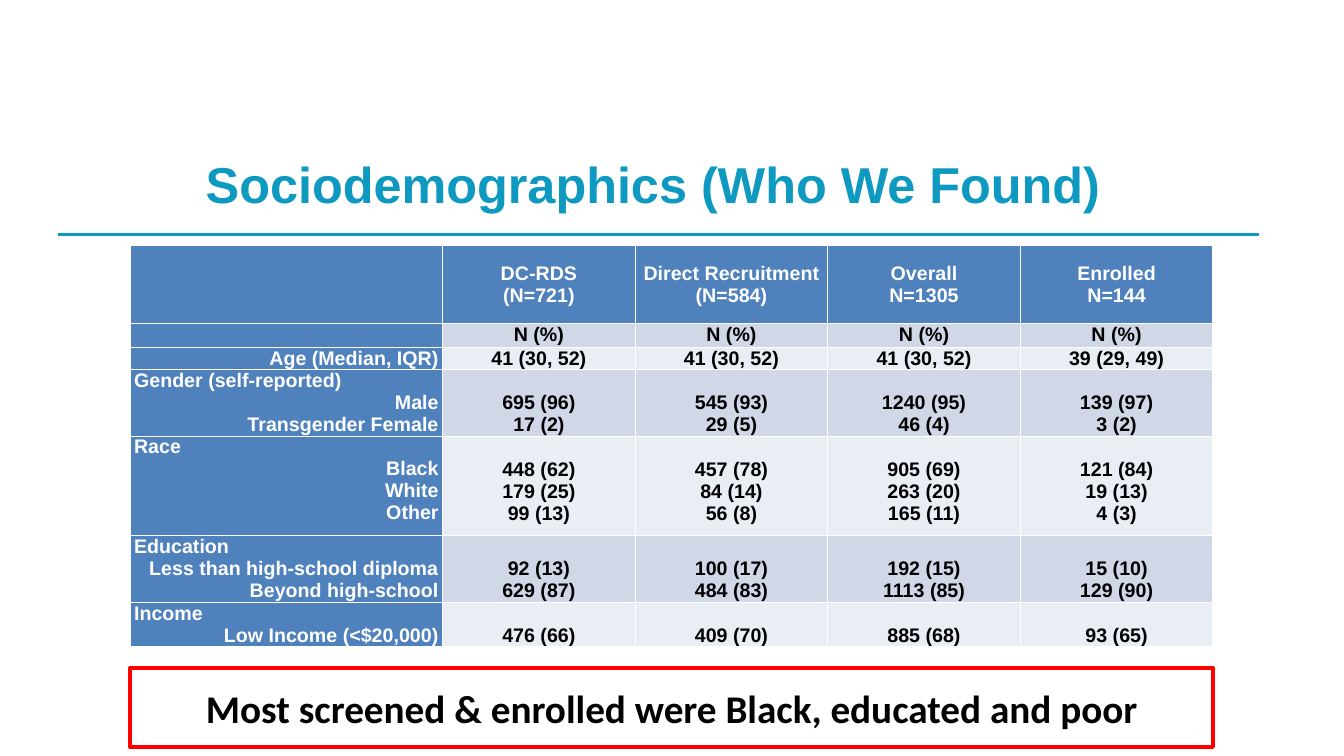
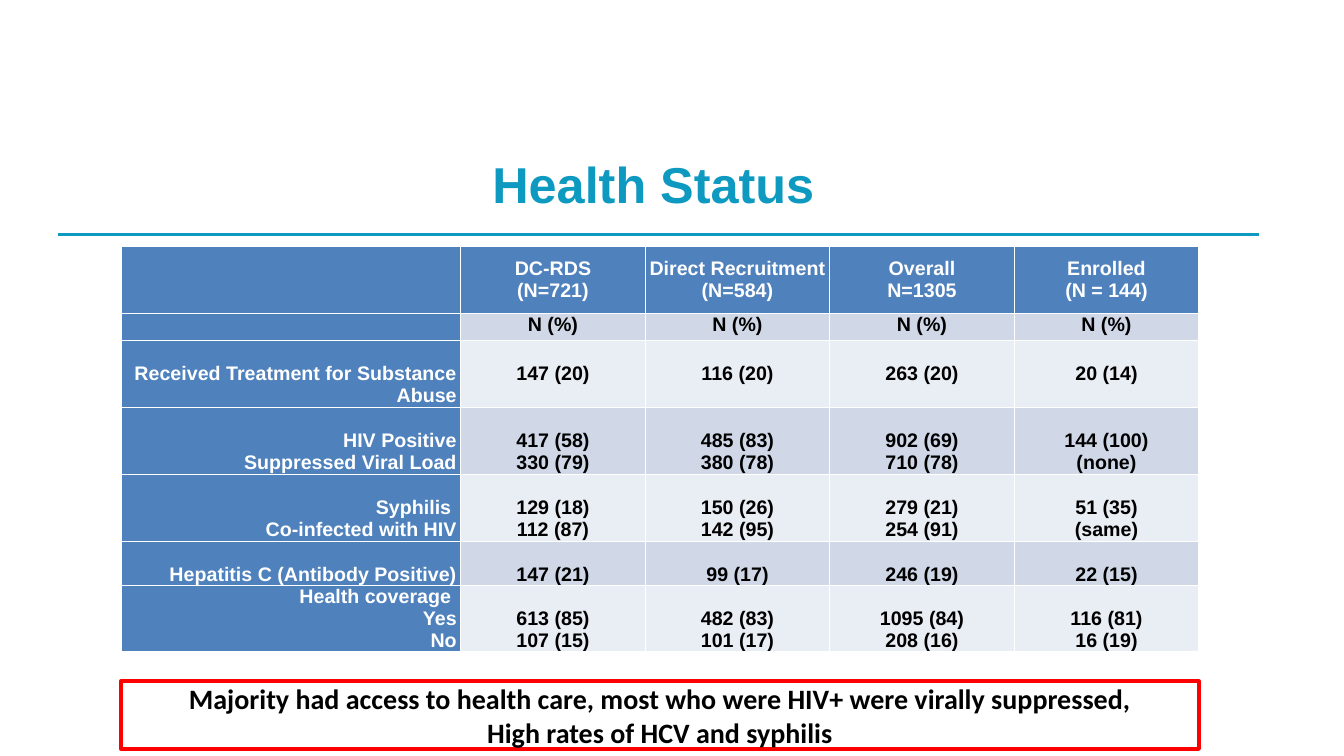
from dataclasses import dataclass

from lxml import etree
from pptx import Presentation
from pptx.dml.color import RGBColor
from pptx.enum.shapes import MSO_CONNECTOR, MSO_SHAPE
from pptx.enum.text import MSO_ANCHOR, MSO_AUTO_SIZE, PP_ALIGN
from pptx.oxml.ns import qn
from pptx.slide import Slide
from pptx.table import _Cell
from pptx.text.text import TextFrame
from pptx.util import Inches, Pt

CENTER, LEFT, RIGHT = PP_ALIGN.CENTER, PP_ALIGN.LEFT, PP_ALIGN.RIGHT
MIDDLE, TOP = MSO_ANCHOR.MIDDLE, MSO_ANCHOR.TOP
STRAIGHT, RECT, NO_FIT = MSO_CONNECTOR.STRAIGHT, MSO_SHAPE.RECTANGLE, MSO_AUTO_SIZE.NONE

TEAL = RGBColor(0x0E, 0x99, 0xC0)
BLUE = RGBColor(0x4F, 0x81, 0xBD)
DARK = RGBColor(0xD0, 0xD8, 0xE8)
LIGHT = RGBColor(0xE9, 0xED, 0xF4)
WHITE = RGBColor(0xFF, 0xFF, 0xFF)
BLACK = RGBColor(0, 0, 0)
RED = RGBColor(0xFF, 0, 0)

SIZE = 14
LINE = 0.22  # height of one line of table text, in inches


@dataclass(frozen=True)
class Row:
    """One table row; drop and lead are the lines left free above values and label."""
    high: float
    label: str
    values: tuple[str, ...]
    drop: int = 0
    lead: int = 0
    group: bool = False


@dataclass(frozen=True)
class Page:
    title: str
    left: float
    top: float
    first: float
    other: float
    rows: tuple[Row, ...]
    note: str
    note_top: float
    note_high: float
    note_size: int


UNITS = ("N (%)",) * 4
HEADS = ("DC-RDS\n(N=721)", "Direct Recruitment (N=584)", "Overall\nN=1305")

PAGES = (
    Page(
        "Sociodemographics (Who We Found)", 1.29, 2.43, 3.1, 1.91,
        (
            Row(0.78, "", (*HEADS, "Enrolled\nN=144")),
            Row(0.22, "", UNITS),
            Row(0.22, "Age (Median, IQR)", ("41 (30, 52)",) * 3 + ("39 (29, 49)",)),
            Row(0.66, "Gender (self-reported)\nMale\nTransgender Female",
                ("695 (96)\n17 (2)", "545 (93)\n29 (5)", "1240 (95)\n46 (4)",
                 "139 (97)\n3 (2)"), drop=1, group=True),
            Row(0.99, "Race\nBlack\nWhite\nOther",
                ("448 (62)\n179 (25)\n99 (13)", "457 (78)\n84 (14)\n56 (8)",
                 "905 (69)\n263 (20)\n165 (11)", "121 (84)\n19 (13)\n4 (3)"),
                drop=1, group=True),
            Row(0.66, "Education\nLess than high-school diploma\nBeyond high-school",
                ("92 (13)\n629 (87)", "100 (17)\n484 (83)", "192 (15)\n1113 (85)",
                 "15 (10)\n129 (90)"), drop=1, group=True),
            Row(0.43, "Income\nLow Income (<$20,000)",
                ("476 (66)", "409 (70)", "885 (68)", "93 (65)"), drop=1, group=True),
        ),
        "Most screened & enrolled were Black, educated and poor", 6.63, 0.78, 28,
    ),
    Page(
        "Health Status", 1.2, 2.44, 3.37, 1.83,
        (
            Row(0.67, "", (*HEADS, "Enrolled\n(N = 144)")),
            Row(0.27, "", UNITS),
            Row(0.66, "Received Treatment for Substance Abuse",
                ("147 (20)", "116 (20)", "263 (20)", "20 (14)"), drop=1, lead=1),
            Row(0.67, "HIV Positive\nSuppressed Viral Load",
                ("417 (58)\n330 (79)", "485 (83)\n380 (78)", "902 (69)\n710 (78)",
                 "144 (100)\n(none)"), drop=1, lead=1),
            Row(0.66, "Syphilis \nCo-infected with HIV",
                ("129 (18)\n112 (87)", "150 (26)\n142 (95)", "279 (21)\n254 (91)",
                 "51 (35)\n(same)"), drop=1, lead=1),
            Row(0.44, "Hepatitis C (Antibody Positive)",
                ("147 (21)", "99 (17)", "246 (19)", "22 (15)"), drop=1, lead=1),
            Row(0.66, "Health coverage \nYes\nNo",
                ("613 (85)\n107 (15)", "482 (83)\n101 (17)", "1095 (84)\n208 (16)",
                 "116 (81)\n16 (19)"), drop=1),
        ),
        "Majority had access to health care, most who were HIV+ were virally suppressed,\n"
        "High rates of HCV and syphilis", 6.76, 0.67, 20,
    ),
)


def style(frame: TextFrame, face: str, size: int, color: RGBColor, align: PP_ALIGN) -> None:
    for para in frame.paragraphs:
        para.alignment = align
        for run in para.runs:
            font = run.font
            font.name, font.size, font.bold = face, Pt(size), True
            font.color.rgb = color


def add_head(slide: Slide, text: str) -> None:
    """Fill the title and draw the rule below it."""
    title = slide.shapes.title
    title.left, title.top = Inches(0.47), Inches(1.3)
    title.width, title.height = Inches(12.02), Inches(1.03)
    frame = title.text_frame
    frame.text = text
    frame.vertical_anchor, frame.auto_size = MIDDLE, NO_FIT
    style(frame, "Arial", 36, TEAL, CENTER)
    rule = slide.shapes.add_connector(
        STRAIGHT, Inches(0.58), Inches(2.33), Inches(12.49), Inches(2.33))
    rule.line.color.rgb, rule.line.width = TEAL, Pt(2)
    etree.SubElement(rule._element.spPr, qn("a:effectLst"))


def fill_cell(cell: _Cell, text: str, fill: RGBColor, color: RGBColor,
              align: PP_ALIGN, skip: int) -> None:
    cell.fill.solid()
    cell.fill.fore_color.rgb = fill
    cell.margin_left = cell.margin_right = Inches(0.04)
    cell.margin_top, cell.margin_bottom = Inches(skip * LINE), 0
    frame = cell.text_frame
    frame.text = text
    style(frame, "Arial", SIZE, color, align)
    if not text:
        # An empty cell takes its line height from the end mark.
        etree.SubElement(frame.paragraphs[0]._p, qn("a:endParaRPr"), sz=str(SIZE * 100))


def add_grid(slide: Slide, page: Page) -> None:
    widths = (page.first, *(page.other,) * 4)
    high = sum(row.high for row in page.rows)
    grid = slide.shapes.add_table(
        len(page.rows), len(widths), Inches(page.left), Inches(page.top),
        Inches(sum(widths)), Inches(high)).table
    grid.first_col = True
    for col, width in zip(grid.columns, widths):
        col.width = Inches(width)
    for i, row in enumerate(page.rows):
        grid.rows[i].height = Inches(row.high)
        label = grid.cell(i, 0)
        fill_cell(label, row.label, BLUE, WHITE, RIGHT, row.lead)
        if row.group:
            label.text_frame.paragraphs[0].alignment = LEFT
        fill = BLUE if i == 0 else DARK if i % 2 else LIGHT
        for j, text in enumerate(row.values, 1):
            cell = grid.cell(i, j)
            fill_cell(cell, text, fill, BLACK if i else WHITE, CENTER, row.drop)
            cell.vertical_anchor = TOP if i else MIDDLE


def add_note(slide: Slide, page: Page) -> None:
    box = slide.shapes.add_shape(
        RECT, Inches(page.left), Inches(page.note_top),
        Inches(page.first + 4 * page.other), Inches(page.note_high))
    box.shadow.inherit = False
    box.fill.solid()
    box.fill.fore_color.rgb = WHITE
    box.line.color.rgb, box.line.width = RED, Pt(3)
    frame = box.text_frame
    frame.text = page.note
    frame.word_wrap, frame.vertical_anchor = True, MIDDLE
    style(frame, "Calibri", page.note_size, BLACK, CENTER)


def main() -> None:
    deck = Presentation()
    deck.slide_width, deck.slide_height = Inches(13.33), Inches(7.5)
    for page in PAGES:
        slide = deck.slides.add_slide(deck.slide_layouts[5])
        add_head(slide, page.title)
        add_grid(slide, page)
        add_note(slide, page)
    deck.save("out.pptx")


if __name__ == "__main__":
    main()
